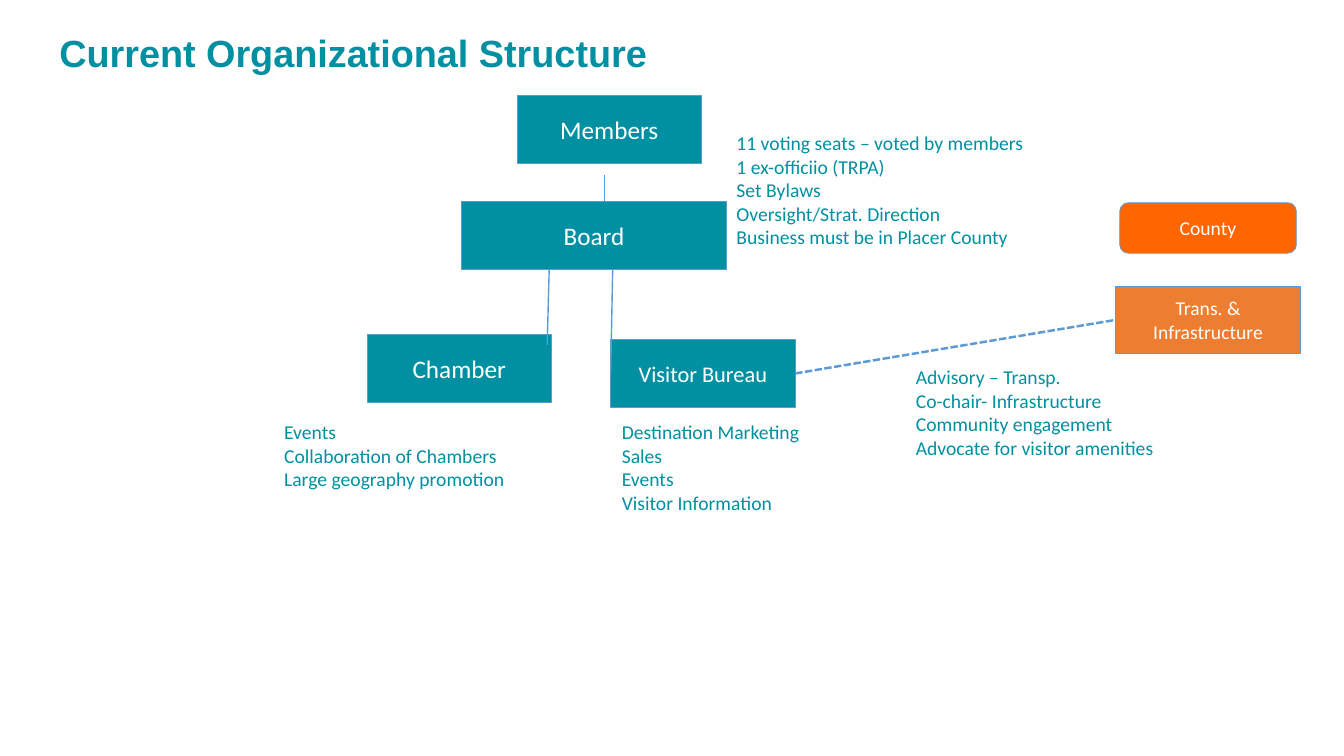
from pptx import Presentation
from pptx.dml.color import RGBColor
from pptx.enum.dml import MSO_LINE
from pptx.enum.shapes import MSO_CONNECTOR, MSO_SHAPE
from pptx.enum.text import MSO_ANCHOR, MSO_AUTO_SIZE, PP_ALIGN
from pptx.util import Cm, Pt
from lxml import etree

RECT, ROUNDED = MSO_SHAPE.RECTANGLE, MSO_SHAPE.ROUNDED_RECTANGLE
STRAIGHT, DASH = MSO_CONNECTOR.STRAIGHT, MSO_LINE.SQUARE_DOT
LEFT, CENTER = PP_ALIGN.LEFT, PP_ALIGN.CENTER
MIDDLE = MSO_ANCHOR.MIDDLE
NO_FIT, GROW = MSO_AUTO_SIZE.NONE, MSO_AUTO_SIZE.SHAPE_TO_FIT_TEXT
LEFT_SIDE, RIGHT_SIDE = 1, 3
DRAWING_NS = "http://schemas.openxmlformats.org/drawingml/2006/main"

COLORS = {"teal": "0090A1", "orange": "ED7D31", "county": "FF6600",
          "line": "5B9BD5", "white": "FFFFFF"}
BOX_WIDTH, BOX_HEIGHT = 4.65, 1.7


def rgb(name):
    return RGBColor.from_string(COLORS[name])


class OrgSlide:
    """Holds the slide and draws its elements; lengths in centimetres."""

    def __init__(self, slide, font="Calibri", note_size=14):
        self.slide = slide
        self.font = font
        self.note_size = note_size

    def add_text(self, paragraph, text, size, color, align=LEFT, font=None, bold=False):
        paragraph.alignment = align
        run = paragraph.add_run()
        run.text = text
        run.font.name = font or self.font
        run.font.size = Pt(size)
        run.font.bold = bold
        run.font.color.rgb = rgb(color)

    def title(self, text, left, top, width, height):
        title = self.slide.shapes.title
        title.left, title.top = Cm(left), Cm(top)
        title.width, title.height = Cm(width), Cm(height)
        frame = title.text_frame
        frame.auto_size = NO_FIT
        frame.vertical_anchor = MIDDLE
        heading = frame.paragraphs[0]
        heading.line_spacing = 0.9
        self.add_text(heading, text, 27, "teal", font="Arial", bold=True)

    def box(self, text, left, top, width=BOX_WIDTH, height=BOX_HEIGHT,
            size=18, fill="teal", shape=RECT):
        box = self.slide.shapes.add_shape(shape, Cm(left), Cm(top), Cm(width), Cm(height))
        box.shadow.inherit = False
        box.fill.solid()
        box.fill.fore_color.rgb = rgb(fill)
        box.line.color.rgb = rgb("line")
        box.line.width = Pt(0.5)
        frame = box.text_frame
        frame.word_wrap = True
        frame.vertical_anchor = MIDDLE
        self.add_text(frame.paragraphs[0], text, size, "white", CENTER)
        return box

    def note(self, lines, left, top, width, height):
        note = self.slide.shapes.add_textbox(Cm(left), Cm(top), Cm(width), Cm(height))
        frame = note.text_frame
        frame.word_wrap = False
        frame.auto_size = GROW
        for index, line in enumerate(lines):
            paragraph = frame.add_paragraph() if index else frame.paragraphs[0]
            self.add_text(paragraph, line, self.note_size, "teal")

    def link(self, start, end, width=1):
        link = self.slide.shapes.add_connector(STRAIGHT, *(Cm(v) for v in start + end))
        link.line.color.rgb = rgb("line")
        link.line.width = Pt(width)
        etree.SubElement(link._element.spPr, f"{{{DRAWING_NS}}}effectLst")
        return link


def main():
    prs = Presentation()
    prs.slide_width, prs.slide_height = Cm(33.87), Cm(19.05)
    org = OrgSlide(prs.slides.add_slide(prs.slide_layouts[5]))

    org.title("Current Organizational Structure", 1.24, 0.71, 29.21, 1.37)

    # Organization boxes
    org.box("Board", 11.63, 5.08, width=6.68)
    org.box("Chamber", 9.25, 8.43)
    bureau = org.box("Visitor Bureau", 15.39, 8.56, size=16)
    infrastructure = org.box("Trans. & Infrastructure", 28.12, 7.21, size=14, fill="orange")
    org.box("County", 28.22, 5.11, 4.45, 1.27, size=14, fill="county", shape=ROUNDED)
    org.box("Members", 13.03, 2.41)

    # Links between the levels
    org.link((15.24, 4.42), (15.24, 5.08))
    org.link((13.84, 6.78), (13.79, 8.69))
    board_to_bureau = org.link((15.44, 6.78), (15.39, 9.41))
    board_to_bureau.end_connect(bureau, LEFT_SIDE)
    advisory = org.link((20.04, 9.41), (28.12, 8.06), width=1.75)
    advisory.line.dash_style = DASH
    advisory.begin_connect(bureau, RIGHT_SIDE)
    advisory.end_connect(infrastructure, LEFT_SIDE)

    # Notes on each body's role
    org.note(["11 voting seats – voted by members", "1 ex-officiio (TRPA)", "Set Bylaws",
              "Oversight/Strat. Direction", "Business must be in Placer County"],
             18.31, 3.18, 7.82, 3.25)
    org.note(["Events", "Collaboration of Chambers", "Large geography promotion"],
             6.91, 10.46, 6.12, 2.06)
    org.note(["Destination Marketing", "Sales", "Events", "Visitor Information"],
             15.42, 10.46, 5.05, 3.84)
    org.note(["Advisory – Transp.", "Co-chair- Infrastructure", "Community engagement",
              "Advocate for visitor amenities"],
             22.83, 9.07, 6.68, 3.84)

    prs.save("out.pptx")


if __name__ == "__main__":
    main()
